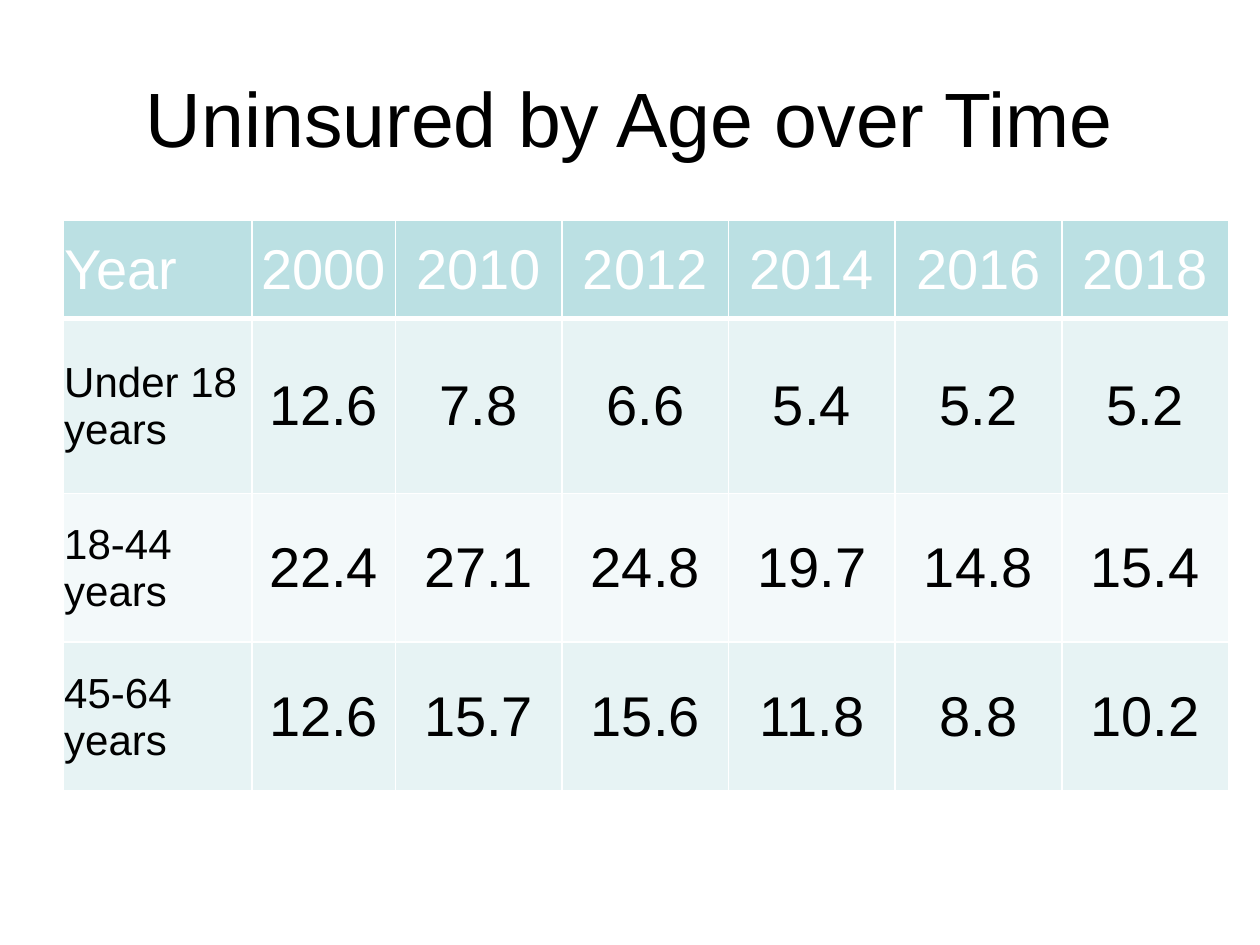
"""Build a slide with a table of uninsured rates by age group over time."""
from dataclasses import dataclass

from lxml.etree import SubElement
from pptx import Presentation
from pptx.dml.color import RGBColor
from pptx.enum.text import MSO_ANCHOR as Anchor, PP_ALIGN as Align
from pptx.oxml.ns import qn
from pptx.util import Pt

BLACK, WHITE = "000000", "FFFFFF"
YEARS = ("2000", "2010", "2012", "2014", "2016", "2018")
COL_WIDTHS = (108, 82) + (95.2,) * 5


@dataclass(frozen=True)
class Row:
    label: str
    values: tuple[str, ...]
    height: float
    fill: str
    label_size: float = 24
    color: str = BLACK
    top: float = 1
    bottom: float = 1


ROWS = (
    Row("Year", YEARS, 56, "BBE0E3", 32, WHITE, bottom=3),
    Row("Under 18 years", ("12.6", "7.8", "6.6", "5.4", "5.2", "5.2"), 100, "E7F3F4", top=3),
    Row("18-44 years", ("22.4", "27.1", "24.8", "19.7", "14.8", "15.4"), 85, "F3F9FA"),
    Row("45-64 years", ("12.6", "15.7", "15.6", "11.8", "8.8", "10.2"), 85, "E7F3F4"),
)


def rgb(value: str) -> RGBColor:
    return RGBColor.from_string(value)


def add_run(p, text: str, size: float, color: str, align: Align) -> None:
    p.alignment = align
    r = p.add_run()
    r.text = text
    r.font.name = "Arial"
    r.font.size = Pt(size)
    r.font.bold = False
    r.font.color.rgb = rgb(color)


def add_border(cell, side: str, width: float) -> None:
    tc_pr = cell._tc.get_or_add_tcPr()
    ln = SubElement(tc_pr, qn(f"a:ln{side}"), w=str(int(Pt(width))))
    fill = SubElement(ln, qn("a:solidFill"))
    SubElement(fill, qn("a:srgbClr"), val=WHITE)


def fill_cell(cell, row: Row, text: str, size: float, align: Align) -> None:
    for side, width in (("L", 1), ("R", 1), ("T", row.top), ("B", row.bottom)):
        add_border(cell, side, width)
    cell.fill.solid()
    cell.fill.fore_color.rgb = rgb(row.fill)
    cell.vertical_anchor = Anchor.MIDDLE
    cell.margin_left = cell.margin_right = cell.margin_top = Pt(0.72)
    cell.margin_bottom = Pt(0)
    add_run(cell.text_frame.paragraphs[0], text, size, row.color, align)


def add_title(s, text: str) -> None:
    sp = s.shapes.add_textbox(Pt(36), Pt(21.6), Pt(648), Pt(90))
    tf = sp.text_frame
    tf.word_wrap = True
    tf.vertical_anchor = Anchor.MIDDLE
    add_run(tf.paragraphs[0], text, 44, BLACK, Align.CENTER)


def add_rate_table(s, rows: tuple[Row, ...]) -> None:
    height = sum(row.height for row in rows)
    table = s.shapes.add_table(
        len(rows), len(COL_WIDTHS), Pt(36), Pt(126), Pt(sum(COL_WIDTHS)), Pt(height)
    ).table
    table.horz_banding = False
    for col, width in zip(table.columns, COL_WIDTHS):
        col.width = Pt(width)
    for i, row in enumerate(rows):
        table.rows[i].height = Pt(row.height)
        fill_cell(table.cell(i, 0), row, row.label, row.label_size, Align.LEFT)
        for j, value in enumerate(row.values, 1):
            fill_cell(table.cell(i, j), row, value, 32, Align.CENTER)


def main() -> None:
    prs = Presentation()
    prs.slide_width, prs.slide_height = Pt(720), Pt(540)
    s = prs.slides.add_slide(prs.slide_layouts[6])
    add_title(s, "Uninsured by Age over Time")
    add_rate_table(s, ROWS)
    prs.save("out.pptx")


if __name__ == "__main__":
    main()
